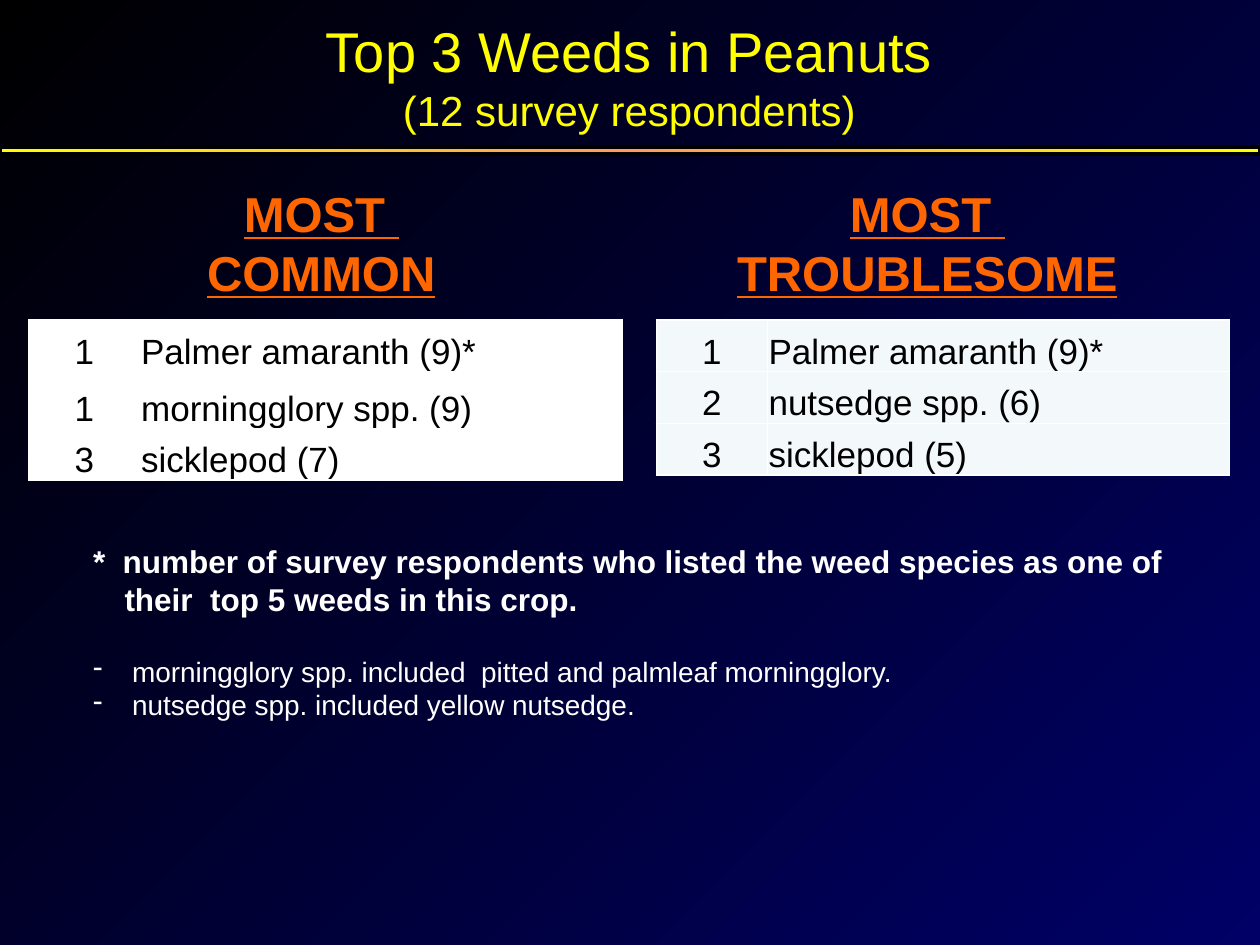
"""Build the slide on the top three weeds in peanuts."""
from copy import deepcopy
from dataclasses import dataclass

from lxml.etree import SubElement
from pptx import Presentation
from pptx.dml.color import RGBColor
from pptx.enum.shapes import MSO_SHAPE
from pptx.enum.text import MSO_ANCHOR, PP_ALIGN
from pptx.oxml.ns import qn
from pptx.util import Inches, Pt


@dataclass(frozen=True)
class Theme:
    font: str = "Arial"
    night: tuple = ("000000", "000066")
    rule: tuple = ("FFFF00", "FF9966", "FFFF00")
    black: str = "000000"
    white: str = "FFFFFF"
    yellow: str = "FFFF00"
    orange: str = "FF6600"
    title: int = 32
    subtitle: int = 24
    heading: int = 28
    body: int = 20
    note: int = 18
    detail: int = 16


THEME = Theme()
TITLE = [("Top 3 Weeds in Peanuts", THEME.title),
         ("(12 survey respondents)", THEME.subtitle)]
RANKINGS = [
    {"heading": ["MOST ", "COMMON"], "heading_box": (1.35, 1.41, 2.4, 1.04),
     "wrap": True, "left": 0.23, "columns": (0.88, 3.83),
     "rows": (0.41, 0.45, 0.41), "fill": "FFFFFF",
     "weeds": [("1", "Palmer amaranth (9)*"), ("1", "morningglory spp. (9)"),
               ("3", "sicklepod (7)")]},
    {"heading": ["MOST ", "TROUBLESOME"], "heading_box": (5.73, 1.41, 3.26, 1.04),
     "wrap": False, "left": 5.21, "columns": (0.88, 3.67),
     "rows": (0.41, 0.41, 0.41), "fill": "F3F9FA",
     "weeds": [("1", "Palmer amaranth (9)*"), ("2", "nutsedge spp. (6)"),
               ("3", "sicklepod (5)")]},
]
FOOTNOTE = ("*  number of survey respondents who listed the weed species "
            "as one of their  top 5 weeds in this crop.")
DETAILS = ["morningglory spp. included  pitted and palmleaf morningglory.",
           "nutsedge spp. included yellow nutsedge."]
TABLE_TOP = 2.54


def box(*lengths):
    return [Inches(length) for length in lengths]


def style(paragraph, size, color, bold=False, align=PP_ALIGN.LEFT):
    paragraph.alignment = align
    font = paragraph.font
    font.name, font.size, font.bold = THEME.font, Pt(size), bold
    font.color.rgb = RGBColor.from_string(color)


def write(frame, lines):
    frame.text = "\n".join(lines)
    return frame.paragraphs


def blend(fill, colors, angle):
    fill.gradient()
    fill.gradient_angle = angle
    first = fill.gradient_stops[0]._gs
    for _ in colors[2:]:
        first.addnext(deepcopy(first))
    for index, (stop, color) in enumerate(zip(fill.gradient_stops, colors)):
        stop.position = index / (len(colors) - 1)
        stop.color.rgb = RGBColor.from_string(color)


def hang(paragraph, indent, bullet=None):
    properties = paragraph._p.get_or_add_pPr()
    properties.set("marL", str(Inches(indent)))
    properties.set("indent", str(-Inches(indent)))
    if bullet:
        SubElement(properties, qn("a:buChar"), char=bullet)


def border(cell, color, width):
    properties = cell._tc.get_or_add_tcPr()
    for index, side in enumerate(("lnL", "lnR", "lnT", "lnB")):
        line = properties.makeelement(qn(f"a:{side}"), {"w": str(Pt(width))})
        fill = SubElement(line, qn("a:solidFill"))
        SubElement(fill, qn("a:srgbClr"), val=color)
        properties.insert(index, line)


def add_title(slide):
    title = slide.shapes.title
    title.left, title.top, title.width, title.height = box(0.33, 0, 9.33, 1.2)
    title.text_frame.vertical_anchor = MSO_ANCHOR.MIDDLE
    paragraphs = write(title.text_frame, [line for line, _ in TITLE])
    for paragraph, (_, size) in zip(paragraphs, TITLE):
        style(paragraph, size, THEME.yellow, align=PP_ALIGN.CENTER)
        paragraph.line_spacing = 1.0
        paragraph.space_before = Pt(0)


def add_ranking(slide, ranking):
    heading = slide.shapes.add_textbox(*box(*ranking["heading_box"])).text_frame
    heading.word_wrap = ranking["wrap"]
    for paragraph in write(heading, ranking["heading"]):
        style(paragraph, THEME.heading, THEME.orange, True, PP_ALIGN.CENTER)
        paragraph.font.underline = True

    columns, rows = ranking["columns"], ranking["rows"]
    area = box(ranking["left"], TABLE_TOP, sum(columns), sum(rows))
    table = slide.shapes.add_table(len(rows), len(columns), *area).table
    table.first_row = table.horz_banding = False
    for column, width in zip(table.columns, columns):
        column.width = Inches(width)
    for row, height, weed in zip(table.rows, rows, ranking["weeds"]):
        row.height = Inches(height)
        for cell, text, align in zip(row.cells, weed, (PP_ALIGN.CENTER, PP_ALIGN.LEFT)):
            cell.margin_left = cell.margin_right = cell.margin_top = Inches(0.01)
            cell.margin_bottom = 0
            cell.vertical_anchor = MSO_ANCHOR.BOTTOM
            cell.fill.solid()
            cell.fill.fore_color.rgb = RGBColor.from_string(ranking["fill"])
            border(cell, THEME.white, 1)
            style(write(cell.text_frame, [text])[0], THEME.body, THEME.black, align=align)


def add_notes(slide):
    frame = slide.shapes.add_textbox(*box(0.64, 4.25, 8.86, 1.55)).text_frame
    frame.word_wrap = True
    footnote, *details = write(frame, [FOOTNOTE, *DETAILS])
    style(footnote, THEME.note, THEME.white, bold=True)
    hang(footnote, 0.25)
    details[0].space_before = Pt(21)
    for detail in details:
        style(detail, THEME.detail, THEME.white)
        hang(detail, 0.31, "-")


def add_rule(slide):
    rule = slide.shapes.add_shape(MSO_SHAPE.RECTANGLE, *box(0, 1.17, 10, 0.05))
    rule.shadow.inherit = False
    blend(rule.fill, THEME.rule, 0)
    rule.line.color.rgb = RGBColor.from_string(THEME.black)
    rule.line.width = Pt(2.25)


def main():
    deck = Presentation()
    deck.slide_width, deck.slide_height = box(10, 7.5)
    slide = deck.slides.add_slide(deck.slide_layouts[5])
    blend(slide.background.fill, THEME.night, 315)
    for ranking in RANKINGS:
        add_ranking(slide, ranking)
    add_title(slide)
    add_notes(slide)
    add_rule(slide)
    deck.save("out.pptx")


if __name__ == "__main__":
    main()
